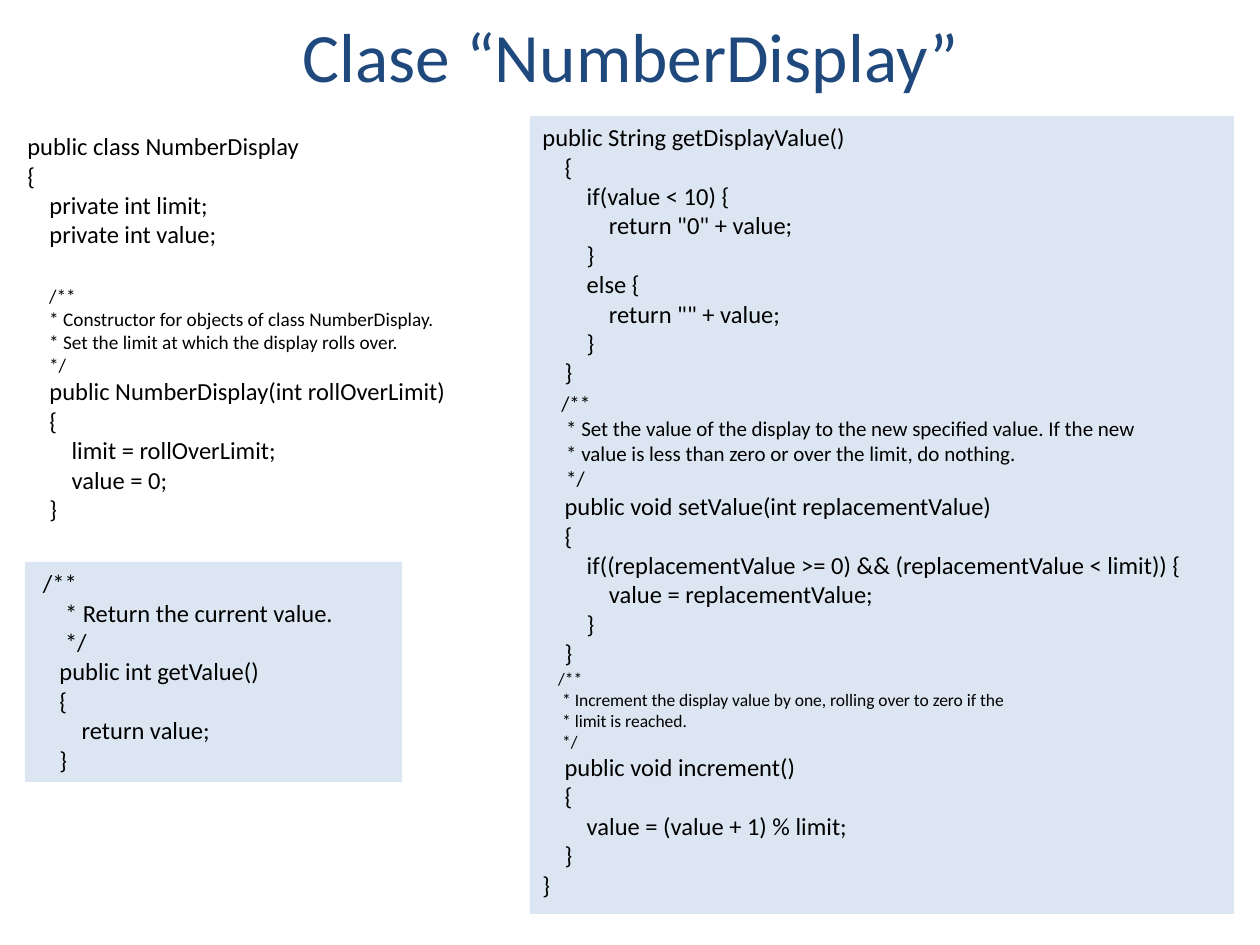
"""Build the slide that lists the code of the NumberDisplay class."""
from dataclasses import dataclass
from typing import Optional

from pptx import Presentation
from pptx.dml.color import RGBColor as Rgb
from pptx.enum.shapes import MSO_SHAPE as Preset
from pptx.enum.text import MSO_ANCHOR as Anchor, MSO_AUTO_SIZE as AutoSize, PP_ALIGN as Align
from pptx.util import Emu, Pt

PX = 914400 // 126


@dataclass(frozen=True)
class Theme:
    font: str = "Calibri"
    heading: Rgb = Rgb(0x1F, 0x49, 0x7D)
    ink: Rgb = Rgb(0, 0, 0)
    panel: Rgb = Rgb(0xDC, 0xE6, 0xF2)
    title_size: float = 39.6
    code_size: int = 14
    space_em: float = 0.226


@dataclass(frozen=True)
class Box:
    left: int
    top: int
    width: int
    height: int

    def emu(self) -> tuple:
        return tuple(Emu(side * PX) for side in (self.left, self.top, self.width, self.height))


@dataclass(frozen=True)
class Passage:
    code: str
    size: int = 14
    before: int = 0


@dataclass(frozen=True)
class Listing:
    box: Box
    passages: tuple
    fill: Optional[Rgb] = None


THEME = Theme()

LISTINGS = (
    Listing(Box(15, 125, 507, 438), (
        Passage('''\
public class NumberDisplay
{
    private int limit;
    private int value;'''),
        Passage('''\
     /**
     * Constructor for objects of class NumberDisplay.
     * Set the limit at which the display rolls over.
     */''', 11, 20),
        Passage('''\
    public NumberDisplay(int rollOverLimit)
    {
        limit = rollOverLimit;
        value = 0;
    }'''),
    )),
    Listing(Box(530, 116, 704, 798), (
        Passage('''\
public String getDisplayValue()
    {
        if(value < 10) {
            return "0" + value;
        }
        else {
            return "" + value;
        }
    }'''),
        Passage('''\
    /**
     * Set the value of the display to the new specified value. If the new
     * value is less than zero or over the limit, do nothing.
     */''', 12, 2),
        Passage('''\
    public void setValue(int replacementValue)
    {
        if((replacementValue >= 0) && (replacementValue < limit)) {
            value = replacementValue;
        }
    }'''),
        Passage('''\
    /**
     * Increment the display value by one, rolling over to zero if the
     * limit is reached.
     */''', 10),
        Passage('''\
    public void increment()
    {
        value = (value + 1) % limit;
    }
}'''),
    ), THEME.panel),
    Listing(Box(25, 562, 377, 220), (
        Passage('''\
 /**
     * Return the current value.
     */
    public int getValue()
    {
        return value;
    }'''),
    ), THEME.panel),
)


def add_run(paragraph, text: str, size: float, color: Rgb) -> None:
    run = paragraph.add_run()
    run.text = text
    run.font.name = THEME.font
    run.font.size = Pt(size)
    run.font.color.rgb = color


def add_title(slide, text: str, box: Box) -> None:
    title = slide.shapes.title
    title.left, title.top, title.width, title.height = box.emu()
    frame = title.text_frame
    frame.auto_size = AutoSize.NONE
    frame.vertical_anchor = Anchor.MIDDLE
    heading = frame.paragraphs[0]
    heading.alignment = Align.CENTER
    add_run(heading, text, THEME.title_size, THEME.heading)


def add_listing(slide, listing: Listing) -> None:
    if listing.fill is None:
        holder = slide.shapes.add_textbox(*listing.box.emu())
    else:
        holder = slide.shapes.add_shape(Preset.RECTANGLE, *listing.box.emu())
        holder.shadow.inherit = False
        holder.fill.solid()
        holder.fill.fore_color.rgb = listing.fill
        holder.line.fill.background()
    frame = holder.text_frame
    frame.word_wrap = True
    frame.auto_size = AutoSize.SHAPE_TO_FIT_TEXT
    frame.vertical_anchor = Anchor.TOP
    paragraph = None
    for passage in listing.passages:
        for row, line in enumerate(passage.code.splitlines()):
            paragraph = frame.paragraphs[0] if paragraph is None else frame.add_paragraph()
            paragraph.alignment = Align.LEFT
            statement = line.lstrip()
            indent = (len(line) - len(statement)) * passage.size * THEME.space_em
            paragraph._p.get_or_add_pPr().set("marL", str(int(Pt(indent))))
            if row == 0 and passage.before:
                paragraph.space_before = Pt(passage.before)
            add_run(paragraph, statement, passage.size, THEME.ink)


def main() -> None:
    deck = Presentation()
    deck.slide_width, deck.slide_height = Emu(1260 * PX), Emu(945 * PX)
    slide = deck.slides.add_slide(deck.slide_layouts.get_by_name("Title Only"))
    add_title(slide, "Clase “NumberDisplay”", Box(64, 26, 1134, 58))
    for listing in LISTINGS:
        add_listing(slide, listing)
    deck.save("out.pptx")


if __name__ == "__main__":
    main()
